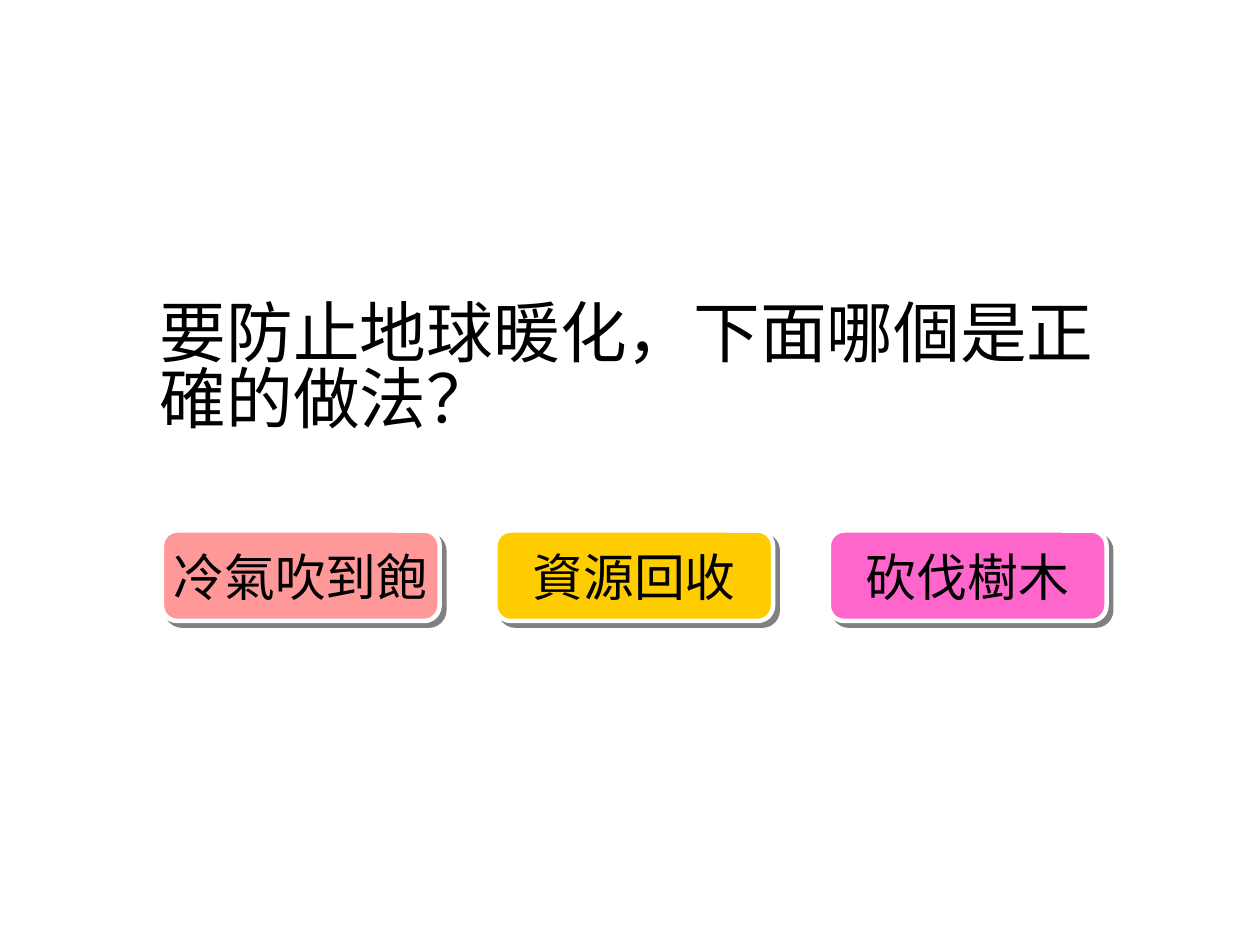
import lxml.etree
import pptx
import pptx.dml.color
import pptx.enum.shapes
import pptx.enum.text
import pptx.oxml.ns
import pptx.util
from pptx.util import Cm

FONT = "Noto Sans CJK SC"
ANSWERS = [("冷氣吹到飽", "FF9999"), ("資源回收", "FFCC00"), ("砍伐樹木", "FF66CC")]


def color(hex_value):
    return pptx.dml.color.RGBColor.from_string(hex_value)


def add_element(parent, tag, **attributes):
    return lxml.etree.SubElement(parent, pptx.oxml.ns.qn(tag), **attributes)


def write_text(text_frame, text, size, alignment):
    text_frame.text = text
    paragraph = text_frame.paragraphs[0]
    paragraph.alignment = alignment
    run = paragraph.runs[0]
    run.font.size = pptx.util.Pt(size)
    run.font.color.rgb = color("000000")
    run.font.name = FONT
    add_element(run._r.get_or_add_rPr(), "a:ea", typeface=FONT)


def add_hard_shadow(shape):
    shape.shadow.inherit = False
    effects = shape._element.spPr.find(pptx.oxml.ns.qn("a:effectLst"))
    shadow = add_element(effects, "a:outerShdw", blurRad="0",
                         dist=str(pptx.util.Pt(4.2)), dir="2700000",
                         algn="tl", rotWithShape="0")
    add_element(shadow, "a:srgbClr", val="808080")


def format_question(title, text):
    title.left, title.top = Cm(3.3), Cm(6.5)
    title.width, title.height = Cm(22.5), Cm(4.2)
    text_frame = title.text_frame
    text_frame.word_wrap = True
    text_frame.auto_size = pptx.enum.text.MSO_AUTO_SIZE.NONE
    text_frame.vertical_anchor = pptx.enum.text.MSO_ANCHOR.TOP
    text_frame.margin_top = Cm(0.28)
    write_text(text_frame, text, 42, pptx.enum.text.PP_ALIGN.LEFT)
    text_frame.paragraphs[0].line_spacing = 0.82


def add_answer_button(slide, left, text, fill):
    button = slide.shapes.add_shape(
        pptx.enum.shapes.MSO_SHAPE.ROUNDED_RECTANGLE,
        left, Cm(11.79), Cm(6.17), Cm(2.01))
    button.adjustments[0] = 0.17
    button.fill.solid()
    button.fill.fore_color.rgb = color(fill)
    button.line.color.rgb = color("FFFFFF")
    button.line.width = pptx.util.Pt(2.83)
    add_hard_shadow(button)
    text_frame = button.text_frame
    text_frame.word_wrap = False
    text_frame.vertical_anchor = pptx.enum.text.MSO_ANCHOR.MIDDLE
    text_frame.margin_left = text_frame.margin_right = Cm(0.3)
    text_frame.margin_top = text_frame.margin_bottom = Cm(0.18)
    write_text(text_frame, text, 32, pptx.enum.text.PP_ALIGN.CENTER)


def main():
    presentation = pptx.Presentation()
    presentation.slide_width, presentation.slide_height = Cm(28), Cm(21)
    slide = presentation.slides.add_slide(presentation.slide_layouts[5])
    format_question(slide.shapes.title, "要防止地球暖化，下面哪個是正確的做法？")
    for index, (text, fill) in enumerate(ANSWERS):
        add_answer_button(slide, Cm(3.6 + 7.41 * index), text, fill)
    presentation.save("out.pptx")


if __name__ == "__main__":
    main()
